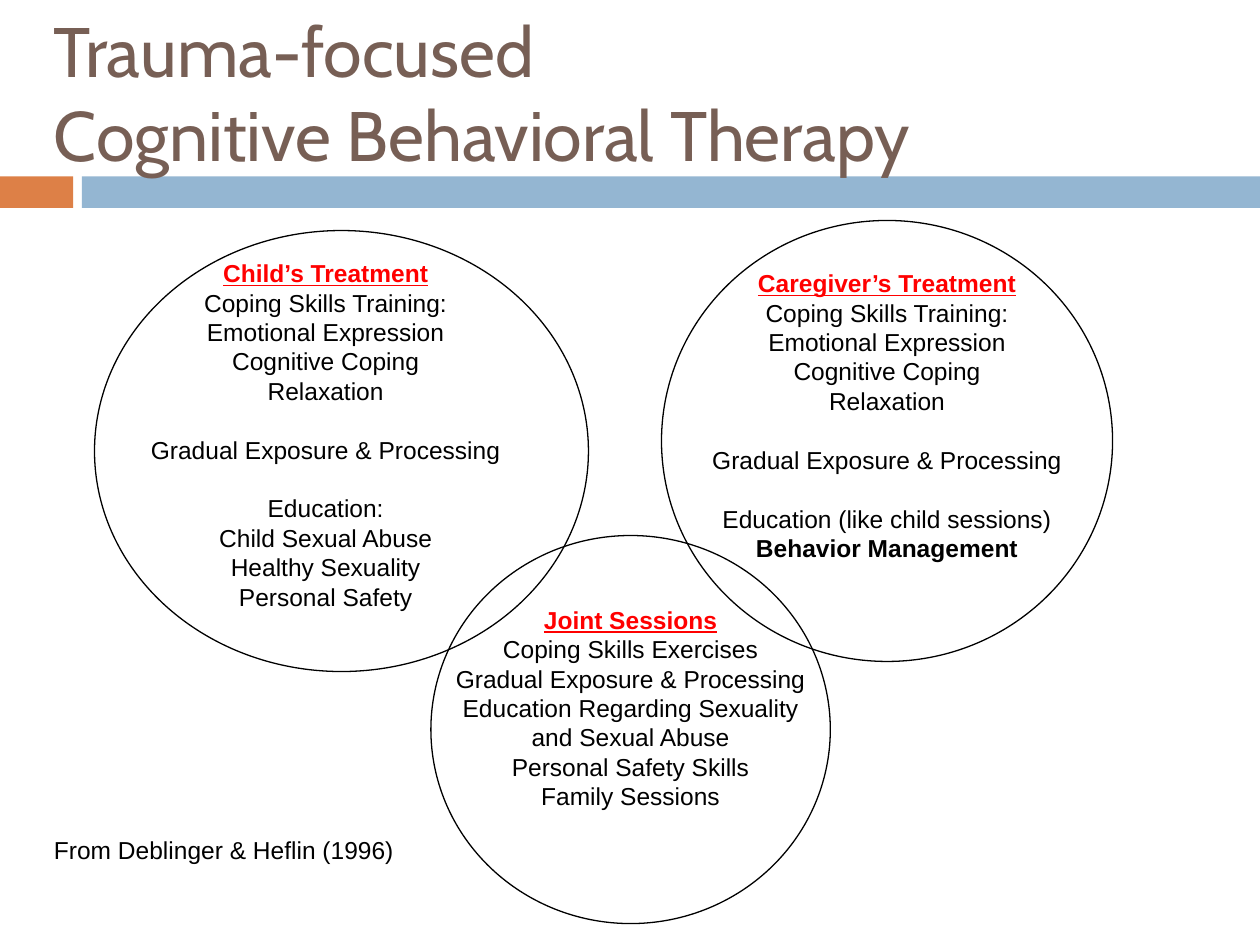
from pptx import Presentation
from pptx.dml.color import RGBColor
from pptx.enum.shapes import MSO_SHAPE
from pptx.enum.text import MSO_ANCHOR, PP_ALIGN
from pptx.util import Inches, Pt

BLACK, RED, BROWN, ORANGE, BLUE = "000000", "FF0000", "775F55", "DD8047", "94B6D2"
LINE_HEIGHT = 16.8
GAP = ""  # marks an empty line's worth of space before the next entry


def color(hex_value):
    return RGBColor.from_string(hex_value)


class SlideBuilder:
    def __init__(self, slide):
        self.slide = slide

    def add_bar(self, left, width, fill):
        bar = self.slide.shapes.add_shape(
            MSO_SHAPE.RECTANGLE, Inches(left), Inches(1.4), Inches(width), Inches(0.25))
        bar.shadow.inherit = False
        bar.fill.solid()
        bar.fill.fore_color.rgb = color(fill)
        bar.line.fill.background()

    def add_circle(self, left, top, width, height):
        circle = self.slide.shapes.add_shape(
            MSO_SHAPE.OVAL, Inches(left), Inches(top), Inches(width), Inches(height))
        circle.shadow.inherit = False
        circle.fill.background()
        circle.line.color.rgb = color(BLACK)
        circle.line.width = Pt(0.75)

    def add_box(self, left, top, width, height):
        box = self.slide.shapes.add_textbox(
            Inches(left), Inches(top), Inches(width), Inches(height))
        box.text_frame.word_wrap = True
        return box.text_frame

    def format_runs(self, para, size, font, hex_value, bold=False, underline=False):
        for span in para.runs:
            span.font.size = Pt(size)
            span.font.name = font
            span.font.color.rgb = color(hex_value)
            span.font.bold = bold
            span.font.underline = underline

    def add_title(self, text):
        frame = self.add_box(0.33, 0, 9.31, 1.45)
        frame.vertical_anchor = MSO_ANCHOR.MIDDLE
        frame.text = text
        self.format_runs(frame.paragraphs[0], 40, "Cabin", BROWN)

    def add_caption(self, text):
        frame = self.add_box(0.33, 6.58, 3.08, 0.33)
        frame.text = text
        frame.paragraphs[0].line_spacing = Pt(LINE_HEIGHT)
        self.format_runs(frame.paragraphs[0], 14, "Arial", BLACK)

    def add_topic(self, place, heading, entries, bold_entry=None):
        """Centred red heading over its entries."""
        frame = self.add_box(*place)
        para = frame.paragraphs[0]
        para.text = heading
        para.alignment = PP_ALIGN.CENTER
        para.line_spacing = Pt(LINE_HEIGHT)
        self.format_runs(para, 14, "Arial", RED, bold=True, underline=True)
        space = 0
        for entry in entries:
            if entry == GAP:
                space = LINE_HEIGHT
                continue
            para = frame.add_paragraph()
            para.text = entry
            para.alignment = PP_ALIGN.CENTER
            para.line_spacing = Pt(LINE_HEIGHT)
            para.space_before = Pt(space)
            self.format_runs(para, 14, "Arial", BLACK, bold=entry == bold_entry)
            space = 0


def main():
    deck = Presentation()
    deck.slide_width, deck.slide_height = Inches(10), Inches(7.5)
    page = SlideBuilder(deck.slides.add_slide(deck.slide_layouts[6]))

    page.add_bar(0, 0.58, ORANGE)
    page.add_bar(0.65, 9.35, BLUE)
    page.add_title("Trauma-focused\vCognitive Behavioral Therapy")

    for circle in ((0.75, 1.83, 3.92, 3.5), (5.25, 1.75, 3.58, 3.5), (3.42, 4.25, 3.17, 3.08)):
        page.add_circle(*circle)

    exposure = "Gradual Exposure & Processing"
    shared = ["Coping Skills Training:", "Emotional Expression", "Cognitive Coping",
              "Relaxation", GAP, exposure, GAP]
    page.add_topic((1, 2, 3.17, 3.4), "Child’s Treatment", shared + [
        "Education:", "Child Sexual Abuse", "Healthy Sexuality", "Personal Safety"])
    page.add_topic((5.5, 2.08, 3.08, 2.93), "Caregiver’s Treatment", shared + [
        "Education (like child sessions)", "Behavior Management"],
        bold_entry="Behavior Management")
    page.add_topic((3.42, 4.75, 3.17, 2.22), "Joint Sessions", [
        "Coping Skills Exercises", exposure, "Education Regarding Sexuality",
        "and Sexual Abuse", "Personal Safety Skills", "Family Sessions"])
    page.add_caption("From Deblinger & Heflin (1996)")

    deck.save("out.pptx")


if __name__ == "__main__":
    main()
